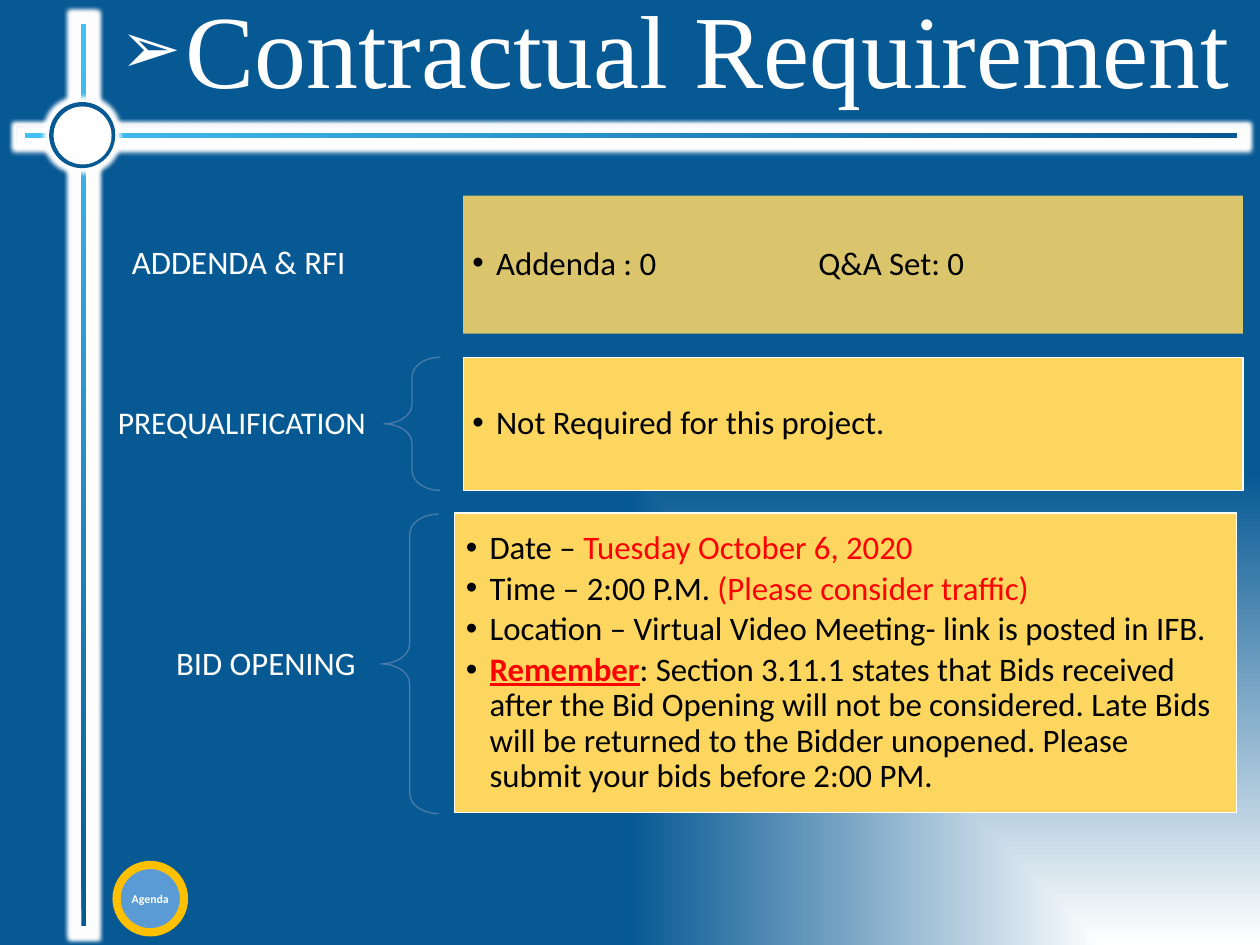
from pptx import Presentation
from pptx.dml.color import RGBColor
from pptx.enum.shapes import MSO_SHAPE
from pptx.enum.text import MSO_ANCHOR, MSO_AUTO_SIZE, PP_ALIGN
from pptx.oxml import parse_xml
from pptx.oxml.ns import nsdecls
from pptx.util import Inches, Pt

THEME = {
    "font": "Calibri", "title_font": "Times New Roman",
    "title": 79, "body": 25, "tight": 24, "button": 9,
    "white": "FFFFFF", "black": "000000", "red": "FF0000",
    "navy": "075994", "sky": "43C0F4", "brace": "497CAB",
    "panel": "FCD65E", "panel_soft": "FFD966",
    "button_fill": "5B9BD5", "button_ring": "FFC000",
}

TITLE = "Contractual Requirement"
# Each list item is a sequence of (text, style) runs.
SECTIONS = [
    {"label": "ADDENDA & RFI", "size": "body", "align": PP_ALIGN.CENTER,
     "label_box": (0.99, 2.09, 3.07, 1.41), "brace": (4.06, 2.09, 0.6, 1.41),
     "panel": (4.9, 2.07, 8.25, 1.46), "inset": 0.1, "soft": True,
     "items": [[("Addenda : 0\t\tQ&A Set: 0", "plain")]]},
    {"label": "PREQUALIFICATION", "size": "tight", "align": PP_ALIGN.RIGHT,
     "label_box": (0.99, 3.78, 3.07, 1.41), "brace": (4.06, 3.78, 0.6, 1.41),
     "panel": (4.9, 3.78, 8.25, 1.41), "inset": 0.1, "soft": False,
     "items": [[("Not Required for this project.", "plain")]]},
    {"label": "BID OPENING ", "size": "body", "align": PP_ALIGN.RIGHT,
     "label_box": (0.99, 6.33, 3.04, 1.41), "brace": (4.03, 5.44, 0.61, 3.17),
     "panel": (4.81, 5.43, 8.27, 3.17), "inset": 0.12, "soft": False,
     "items": [
         [("Date – ", "plain"), ("Tuesday October 6, 2020", "alert")],
         [("Time – 2:00 P.M. ", "plain"), ("(Please consider traffic)", "alert")],
         [("Location – Virtual Video Meeting- link is posted in IFB.", "plain")],
         [("Remember", "strong"),
          (": Section 3.11.1 states that Bids received after the Bid Opening "
           "will not be considered. Late Bids will be returned to the Bidder "
           "unopened. Please submit your bids before 2:00 PM.", "plain")]]},
]
TAB_STOPS = (2.5, 3.66)
# Outer box of each bar's frame, its inner line, and the gradient angle.
BARS = [((0.17, 1.33, 13, 0.2), (0.26, 1.41, 12.83, 0.05), 180),
        ((0.78, 0.17, 0.2, 9.7), (0.86, 0.25, 0.05, 9.55), 90)]
FRAME_WIDTH = 0.05
GLOW = Pt(7)


def rgb(name):
    return RGBColor.from_string(THEME[name])


def xml(tag, attrs="", inner=""):
    return parse_xml(f"<a:{tag} {nsdecls('a')} {attrs}>{inner}</a:{tag}>")


def place(shape, box):
    shape.left, shape.top, shape.width, shape.height = map(Inches, box)


def paint(shape, fill=None, line=None):
    if fill:
        shape.fill.solid()
        shape.fill.fore_color.rgb = rgb(fill)
    else:
        shape.fill.background()
    if line:
        shape.line.color.rgb = rgb(line)
        shape.line.width = Pt(1)
    else:
        shape.line.fill.background()


def add_preset(s, kind, box, fill=None, line=None, adj=()):
    shape = s.shapes.add_shape(kind, *map(Inches, box))
    shape.shadow.inherit = False
    paint(shape, fill, line)
    for i, value in enumerate(adj):
        shape.adjustments[i] = value
    return shape


def set_gradient(fill, colors, angle=None):
    fill.gradient()
    if angle is not None:
        fill.gradient_angle = angle
    for stop, color, position in zip(fill.gradient_stops, colors, (0, 1)):
        stop.color.rgb = rgb(color)
        stop.position = position


def add_glow(shape):
    shape.shadow.inherit = False
    effects = shape._element.spPr.xpath("a:effectLst")[0]
    effects.append(xml("glow", f'rad="{GLOW}"', f'<a:srgbClr val="{THEME["white"]}"/>'))


def setup_frame(tf, insets, anchor=MSO_ANCHOR.MIDDLE):
    tf.word_wrap = True
    tf.auto_size = MSO_AUTO_SIZE.NONE
    tf.vertical_anchor = anchor
    tf.margin_left, tf.margin_top, tf.margin_right, tf.margin_bottom = map(Inches, insets)


def style_run(r, size, color, font="font", bold=False):
    r.font.name = THEME[font]
    r.font.size = Pt(THEME[size])
    r.font.color.rgb = rgb(color)
    r.font.bold = bold


def set_bullet(p, char, indent, color, percent=100):
    pPr = p._p.get_or_add_pPr()
    pPr.set("marL", str(Inches(indent)))
    pPr.set("indent", str(-Inches(indent)))
    pPr.append(xml("buClr", "", f'<a:srgbClr val="{THEME[color]}"/>'))
    pPr.append(xml("buSzPct", f'val="{percent * 1000}"'))
    pPr.append(xml("buFont", 'typeface="Arial"'))
    pPr.append(xml("buChar", f'char="{char}"'))


def fill_list(tf, items):
    for i, item in enumerate(items):
        p = tf.paragraphs[0] if i == 0 else tf.add_paragraph()
        p.alignment = PP_ALIGN.LEFT
        p.line_spacing = 0.9
        p.space_before, p.space_after = Pt(0), Pt(4)
        set_bullet(p, "•", 0.25, "black")
        if any("\t" in text for text, _ in item):
            tabs = "".join(f'<a:tab pos="{Inches(t)}" algn="l"/>' for t in TAB_STOPS)
            p._p.pPr.append(xml("tabLst", "", tabs))
        for text, style in item:
            r = p.add_run()
            r.text = text
            style_run(r, "body", "black" if style == "plain" else "red",
                      bold=style == "strong")
            r.font.underline = style == "strong"


def add_section(s, section, body=None):
    """Draw label, brace and panel; the panel is the body placeholder if given."""
    label = s.shapes.add_textbox(*map(Inches, section["label_box"]))
    setup_frame(label.text_frame, (0.19, 0.07, 0.19, 0.07))
    p = label.text_frame.paragraphs[0]
    p.text = section["label"]
    p.alignment, p.line_spacing = section["align"], 0.9
    style_run(p.runs[0], section["size"], "white")

    soft = section["soft"]
    add_preset(s, MSO_SHAPE.LEFT_BRACE, section["brace"],
               line="navy" if soft else "brace", adj=(0.35, 0.5))
    panel = body or add_preset(s, MSO_SHAPE.RECTANGLE, section["panel"])
    place(panel, section["panel"])
    if soft:
        paint(panel, "panel_soft")
        color = panel._element.spPr.xpath("a:solidFill/a:srgbClr")[0]
        color.append(xml("alpha", 'val="85000"'))
    else:
        paint(panel, "panel", "white")
    setup_frame(panel.text_frame, [section["inset"]] * 4)
    fill_list(panel.text_frame, section["items"])


def add_bar(s, outer, line_box, angle):
    x, y, w, h = map(Inches, outer)
    corners = []
    for d in (0, Inches(FRAME_WIDTH)):
        corners.append([(x + d, y + d), (x + w - d, y + d),
                        (x + w - d, y + h - d), (x + d, y + h - d)])
    outside, inside = corners[0], corners[1][::-1]
    builder = s.shapes.build_freeform(*outside[0])
    builder.add_line_segments(outside[1:])
    builder.move_to(*inside[0])
    builder.add_line_segments(inside[1:])
    frame = builder.convert_to_shape()
    line = add_preset(s, MSO_SHAPE.RECTANGLE, line_box)
    for shape, colors in ((frame, ("sky", "navy")), (line, ("navy", "sky"))):
        shape.line.fill.background()
        set_gradient(shape.fill, colors, angle)
        add_glow(shape)


def main():
    prs = Presentation()
    prs.slide_width, prs.slide_height = Inches(13.33), Inches(10)
    s = prs.slides.add_slide(prs.slide_layouts[1])
    set_gradient(s.background.fill, ("white", "navy"))
    lin = s._element.xpath(".//p:bgPr/a:gradFill/a:lin")[0]
    lin.getparent().replace(lin, xml("path", 'path="rect"', '<a:fillToRect l="100000" t="100000"/>'))

    title, body = s.shapes.title, s.placeholders[1]
    place(title, (1.17, 0.08, 12, 1))
    setup_frame(title.text_frame, (0.1, 0.05, 0.1, 0.05))
    p = title.text_frame.paragraphs[0]
    p.text = TITLE
    p.alignment, p.line_spacing = PP_ALIGN.LEFT, 0.9
    set_bullet(p, "➢", 0.69, "white", 70)
    style_run(p.runs[0], "title", "white", "title_font")

    for section in SECTIONS:
        add_section(s, section, body if section is SECTIONS[-1] else None)

    for bar in BARS:
        add_bar(s, *bar)
    add_glow(add_preset(s, MSO_SHAPE.DONUT, (0.52, 1.08, 0.7, 0.7), "navy", adj=(0.068,)))
    add_preset(s, MSO_SHAPE.OVAL, (0.57, 1.13, 0.61, 0.61), "white")

    button = add_preset(s, MSO_SHAPE.OVAL, (1.24, 9.16, 0.7, 0.7), "button_fill")
    setup_frame(button.text_frame, (0, 0, 0, 0))
    p = button.text_frame.paragraphs[0]
    p.text = "Agenda"
    p.alignment, p.space_before = PP_ALIGN.CENTER, Pt(6)
    style_run(p.runs[0], "button", "white", bold=True)
    add_preset(s, MSO_SHAPE.DONUT, (1.19, 9.11, 0.8, 0.8), "button_ring", adj=(0.109,))
    prs.save("out.pptx")


if __name__ == "__main__":
    main()
